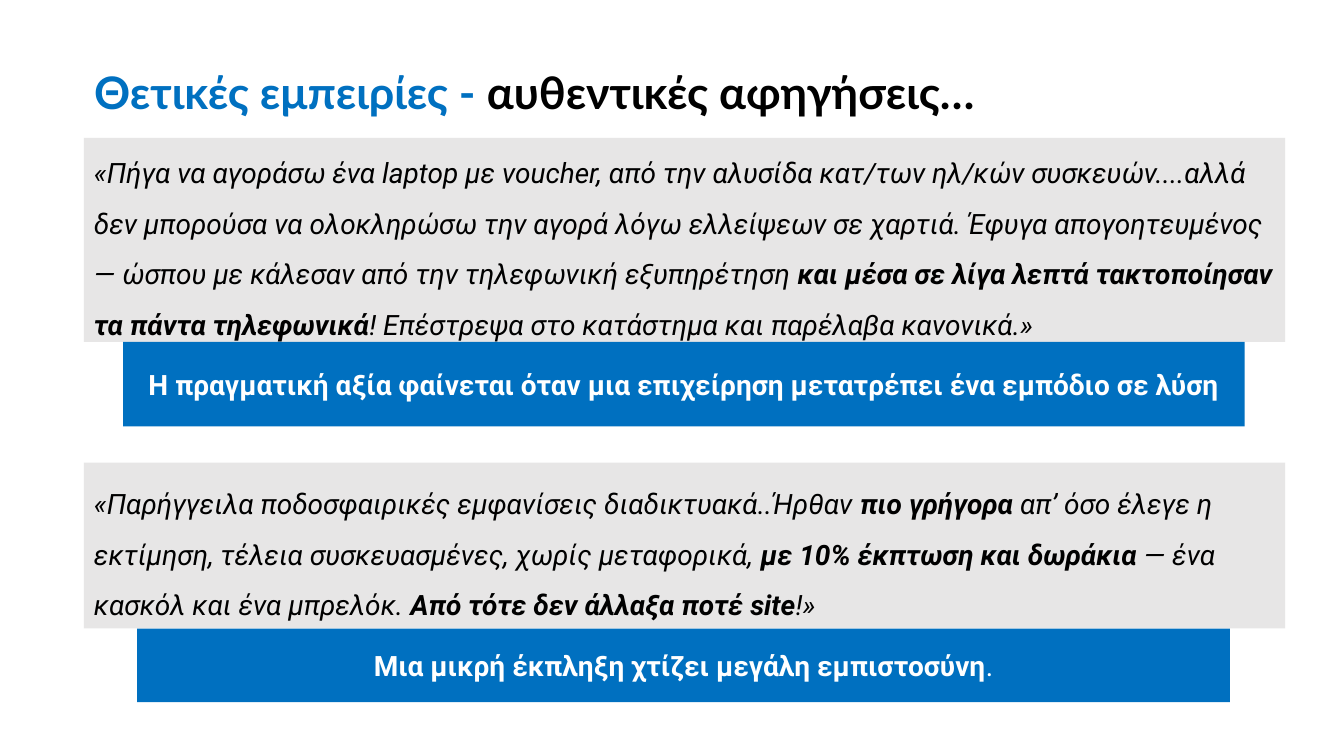
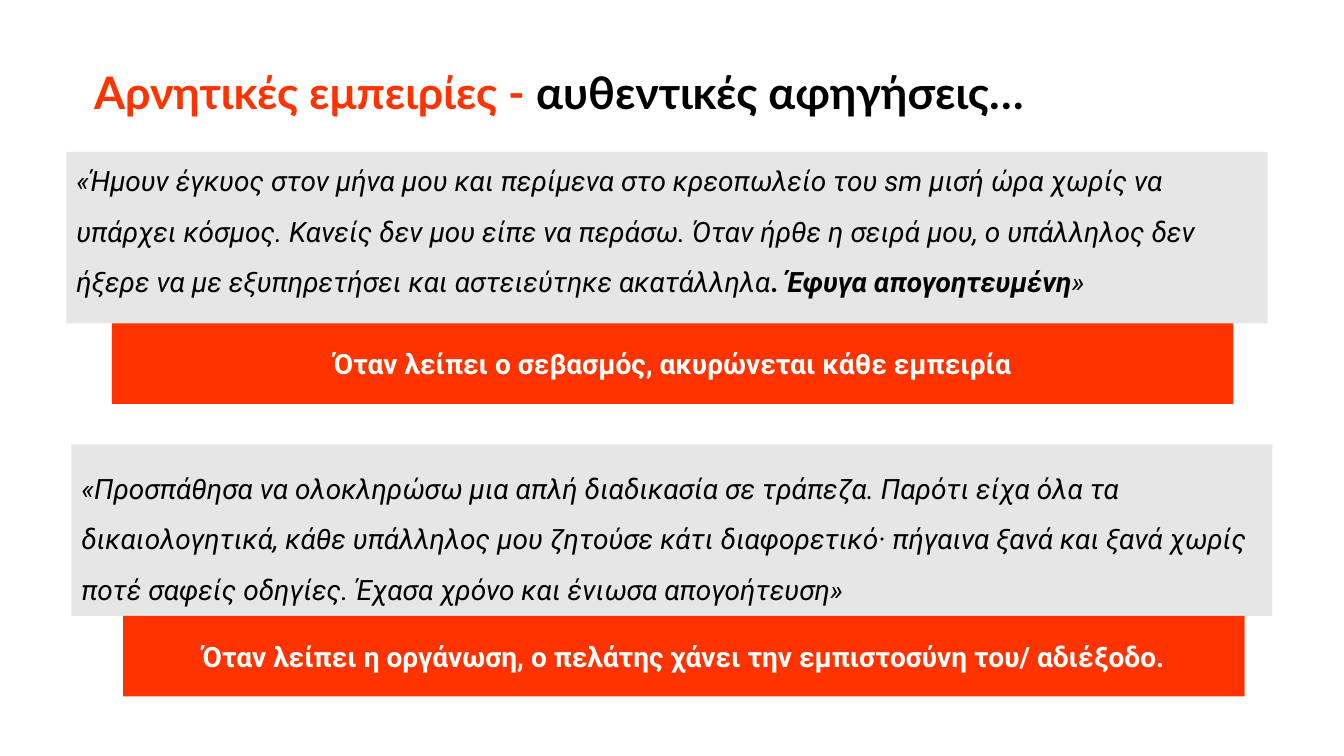
from pptx import Presentation
from pptx.dml.color import RGBColor
from pptx.enum.shapes import MSO_SHAPE
from pptx.enum.text import MSO_ANCHOR, PP_ALIGN
from pptx.util import Pt

RECTANGLE = MSO_SHAPE.RECTANGLE
MIDDLE = MSO_ANCHOR.MIDDLE
LEFT, CENTER = PP_ALIGN.LEFT, PP_ALIGN.CENTER
TITLE_ONLY = 5

COLORS = {
    "positive": "0070C0",
    "negative": "FF3300",
    "quote": "E7E6E6",
    "black": "000000",
    "white": "FFFFFF",
}
TITLE_FONT, BODY_FONT = "Lato", "Roboto"
TITLE_SIZE, BODY_SIZE = 32, 20
TITLE_BOX = (60, 12, 840, 111)
TITLE_ENDING = "αυθεντικές αφηγήσεις…"
QUOTE_WIDTH = 858

# Each story: quote (left, top, height), quote runs, caption (left, width, height),
# caption runs. A run is (text, bold); a run of "\n" is a line break.
SLIDES = [
    ("Θετικές εμπειρίες - ", "positive", [
        ((60, 98.6, 145.6), [
            ("«Πήγα να αγοράσω ένα laptop με voucher, από την αλυσίδα κατ/των "
             "ηλ/κών συσκευών....αλλά δεν μπορούσα να ολοκληρώσω την αγορά λόγω "
             "ελλείψεων σε χαρτιά. Έφυγα απογοητευμένος — ώσπου με κάλεσαν από "
             "την τηλεφωνική εξυπηρέτηση ", False),
            ("και μέσα σε λίγα λεπτά τακτοποίησαν τα πάντα τηλεφωνικά", True),
            ("! Επέστρεψα στο κατάστημα και παρέλαβα κανονικά.»", False),
        ], (88, 801, 60.5), [
            ("Η πραγματική αξία φαίνεται όταν μια επιχείρηση μετατρέπει "
             "ένα εμπόδιο σε λύση", True),
        ]),
        ((60, 330.5, 118.5), [
            ("«Παρήγγειλα ποδοσφαιρικές εμφανίσεις διαδικτυακά..Ήρθαν ", False),
            ("πιο γρήγορα ", True),
            ("απ’ όσο έλεγε η εκτίμηση, τέλεια συσκευασμένες, "
             "χωρίς μεταφορικά, ", False),
            ("με 10% έκπτωση και δωράκια ", True),
            ("— ένα κασκόλ και ένα μπρελόκ. ", False),
            ("Από τότε δεν άλλαξα ποτέ site", True),
            ("!»", False),
        ], (98, 780.5, 52.5), [
            ("Μια μικρή έκπληξη χτίζει μεγάλη εμπιστοσύνη", True),
            (".", False),
        ]),
    ]),
    ("Αρνητικές εμπειρίες - ", "negative", [
        ((47.5, 108.5, 122.5), [
            ("«Ήμουν έγκυος στον μήνα μου και περίμενα στο κρεοπωλείο του sm "
             "μισή ώρα χωρίς να υπάρχει κόσμος. Κανείς δεν μου είπε να περάσω. "
             "Όταν ήρθε η σειρά μου, ο υπάλληλος δεν ήξερε να με εξυπηρετήσει "
             "και αστειεύτηκε ακατάλληλα", False),
            (". Έφυγα απογοητευμένη", True),
            ("»", False),
            ("\n", False),
        ], (80, 801, 57.5), [
            ("Όταν λείπει ο σεβασμός, ακυρώνεται κάθε εμπειρία", True),
        ]),
        ((51, 317.5, 122.5), [
            ("«Προσπάθησα να ολοκληρώσω μια απλή διαδικασία σε τράπεζα. Παρότι "
             "είχα όλα τα δικαιολογητικά, κάθε υπάλληλος μου ζητούσε κάτι "
             "διαφορετικό· πήγαινα ξανά και ξανά χωρίς ποτέ σαφείς οδηγίες. "
             "Έχασα χρόνο και ένιωσα απογοήτευση»", False),
        ], (88, 801, 57.5), [
            ("Όταν λείπει η οργάνωση, ο πελάτης χάνει την εμπιστοσύνη του/ "
             "αδιέξοδο.", True),
        ]),
    ]),
]


def add_run(paragraph, text, font_name, size, color, bold, italic=False):
    run = paragraph.add_run()
    run.text = text
    font = run.font
    font.name, font.size = font_name, Pt(size)
    font.bold, font.italic = bold, italic
    font.color.rgb = RGBColor.from_string(COLORS[color])


def set_title(slide, beginning, accent):
    title = slide.shapes.title
    title.left, title.top, title.width, title.height = map(Pt, TITLE_BOX)
    title.text_frame.word_wrap = True
    title.text_frame.vertical_anchor = MIDDLE
    paragraph = title.text_frame.paragraphs[0]
    paragraph.alignment = LEFT
    paragraph.line_spacing = 0.9
    for text, color in ((beginning, accent), (TITLE_ENDING, "black")):
        add_run(paragraph, text, TITLE_FONT, TITLE_SIZE, color, True)


def add_band(slide, box, fill, runs, color, alignment, line_spacing=1.0, italic=False):
    """Add a filled rectangle with one paragraph of mixed bold and regular runs."""
    shape = slide.shapes.add_shape(RECTANGLE, *map(Pt, box))
    shape.shadow.inherit = False
    shape.fill.solid()
    shape.fill.fore_color.rgb = RGBColor.from_string(COLORS[fill])
    shape.line.fill.background()
    shape.text_frame.word_wrap = True
    shape.text_frame.vertical_anchor = MIDDLE
    paragraph = shape.text_frame.paragraphs[0]
    paragraph.alignment = alignment
    paragraph.line_spacing = line_spacing
    for text, bold in runs:
        if text == "\n":
            paragraph.add_line_break()
        else:
            add_run(paragraph, text, BODY_FONT, BODY_SIZE, color, bold, italic)


def add_story(slide, accent, quote_place, quote_runs, caption_place, caption_runs):
    """Add a quote with its caption band directly underneath."""
    left, top, height = quote_place
    add_band(slide, (left, top, QUOTE_WIDTH, height), "quote", quote_runs,
             "black", LEFT, line_spacing=1.5, italic=True)
    caption_left, caption_width, caption_height = caption_place
    add_band(slide, (caption_left, top + height, caption_width, caption_height),
             accent, caption_runs, "white", CENTER)


def main():
    presentation = Presentation()
    presentation.slide_width, presentation.slide_height = Pt(960), Pt(540)
    for beginning, accent, stories in SLIDES:
        slide = presentation.slides.add_slide(presentation.slide_layouts[TITLE_ONLY])
        set_title(slide, beginning, accent)
        for story in stories:
            add_story(slide, accent, *story)
    presentation.save("out.pptx")


if __name__ == "__main__":
    main()
